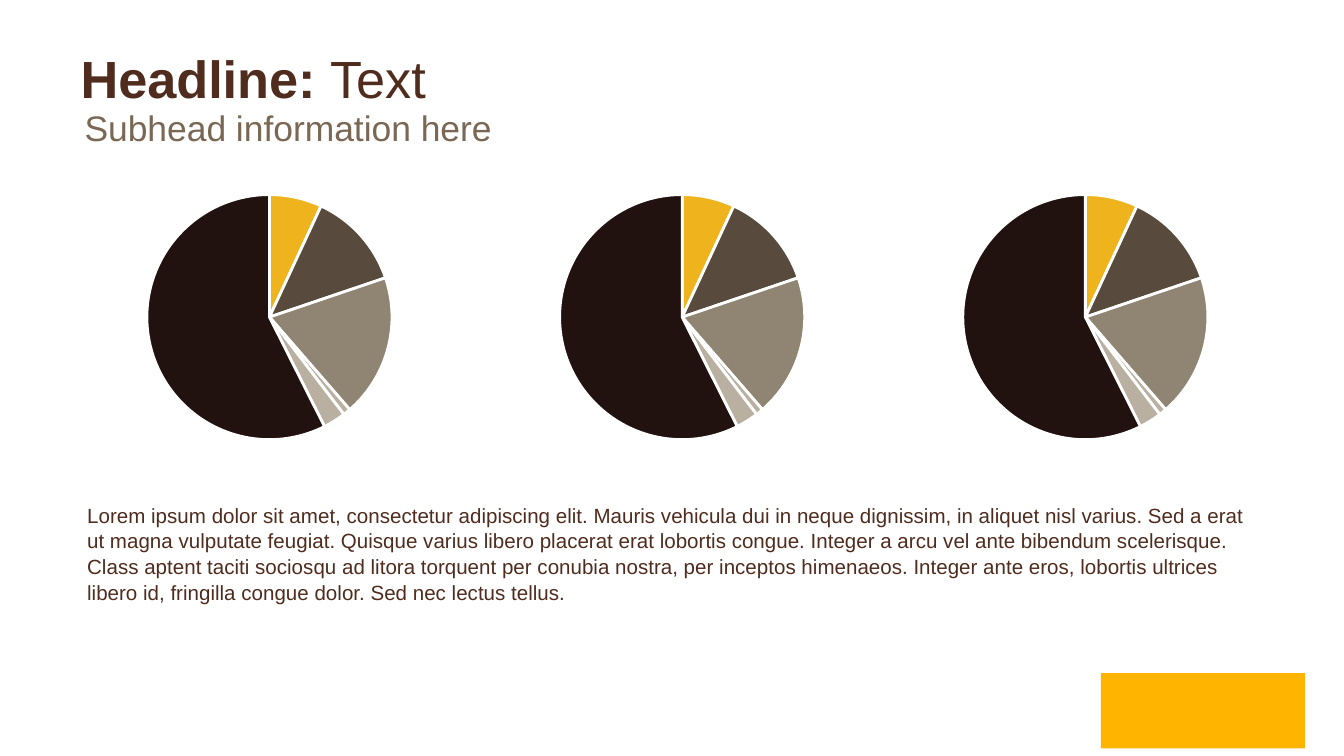
from dataclasses import dataclass

from pptx import Presentation
from pptx import util as u
from pptx.chart import data as chart_data
from pptx.dml.color import RGBColor
from pptx.enum import chart as chart_enum
from pptx.enum import shapes, text


@dataclass(frozen=True)
class Theme:
    heading: str = "4F2C1D"
    subhead: str = "7A6855"
    accent: str = "FFB500"
    white: str = "FFFFFF"
    chart_text: str = "000000"
    slices: tuple[str, ...] = ("EFB31D", "584B3D", "908472", "B9B0A1", "B9B0A1", "21120F")
    text_font: str = "Arial"
    chart_font: str = "Calibri"
    title_size: float = 28
    subhead_size: float = 19
    body_size: float = 11
    chart_size: float = 12


@dataclass(frozen=True)
class Area:
    left: float
    top: float
    width: float
    height: float

    def lengths(self) -> tuple[u.Length, ...]:
        return tuple(u.Pt(n) for n in (self.left, self.top, self.width, self.height))


@dataclass(frozen=True)
class Pie:
    area: Area
    values: tuple[float, ...]


THEME = Theme()
SHARES = (7, 13, 19, 1, 3, 58)
PIES = [Pie(Area(left, 94.3, 200.9, 151.2), SHARES) for left in (43.9, 265, 481)]
BODY = (
    "Lorem ipsum dolor sit amet, consectetur adipiscing elit. Mauris vehicula dui in neque "
    "dignissim, in aliquet nisl varius. Sed a erat ut magna vulputate feugiat. Quisque varius "
    "libero placerat erat lobortis congue. Integer a arcu vel ante bibendum scelerisque. Class "
    "aptent taciti sociosqu ad litora torquent per conubia nostra, per inceptos himenaeos. "
    "Integer ante eros, lobortis ultrices libero id, fringilla congue dolor. Sed nec lectus tellus."
)


def rgb(value: str) -> RGBColor:
    return RGBColor.from_string(value)


def add_span(para, words: str, *, size: float, color: str, bold: bool = False) -> None:
    span = para.add_run()
    span.text = words
    span.font.name = THEME.text_font
    span.font.size = u.Pt(size)
    span.font.bold = bold
    span.font.color.rgb = rgb(color)


def add_title(page, area: Area) -> None:
    title = page.shapes.title
    title.left, title.top, title.width, title.height = area.lengths()
    frame = title.text_frame
    frame.auto_size = text.MSO_AUTO_SIZE.NONE
    frame.vertical_anchor = text.MSO_ANCHOR.MIDDLE
    para = frame.paragraphs[0]
    para.alignment = text.PP_ALIGN.LEFT
    add_span(para, "Headline: ", size=THEME.title_size, color=THEME.heading, bold=True)
    add_span(para, "Text", size=THEME.title_size, color=THEME.heading)


def add_text(page, area: Area, words: str, *, size: float, color: str,
             spacing: float = 1.0) -> None:
    box = page.shapes.add_textbox(*area.lengths())
    box.text_frame.word_wrap = True
    para = box.text_frame.paragraphs[0]
    para.line_spacing = spacing
    add_span(para, words, size=size, color=color)


def add_block(page, area: Area, color: str) -> None:
    block = page.shapes.add_shape(shapes.MSO_SHAPE.RECTANGLE, *area.lengths())
    block.shadow.inherit = False
    block.fill.solid()
    block.fill.fore_color.rgb = rgb(color)
    block.line.fill.background()


def add_pie(page, pie: Pie) -> None:
    data = chart_data.CategoryChartData()
    data.categories = [str(n) for n in range(1, len(pie.values) + 1)]
    data.add_series("Series 1", pie.values)
    chart = page.shapes.add_chart(
        chart_enum.XL_CHART_TYPE.PIE, *pie.area.lengths(), data).chart
    chart.has_title = False
    chart.has_legend = False
    chart.font.name = THEME.chart_font
    chart.font.size = u.Pt(THEME.chart_size)
    chart.font.color.rgb = rgb(THEME.chart_text)
    plot = chart.plots[0]
    plot.vary_by_categories = True
    for index, color in enumerate(THEME.slices):
        style = plot.series[0].points[index].format
        style.fill.solid()
        style.fill.fore_color.rgb = rgb(color)
        style.line.color.rgb = rgb(THEME.white)
        style.line.width = u.Pt(1.5)


def main() -> None:
    deck = Presentation()
    deck.slide_width, deck.slide_height = u.Pt(720), u.Pt(405)
    page = deck.slides.add_slide(deck.slide_layouts.get_by_name("Title Only"))
    add_block(page, Area(589.7, 360.7, 109.4, 40.3), THEME.accent)
    add_title(page, Area(36, 7.9, 648, 67.7))
    add_text(page, Area(38.2, 53.3, 253.4, 30.2), "Subhead information here",
             size=THEME.subhead_size, color=THEME.subhead)
    for pie in PIES:
        add_pie(page, pie)
    add_text(page, Area(39.6, 265, 642.2, 73.4), BODY,
             size=THEME.body_size, color=THEME.heading, spacing=1.05)
    deck.save("out.pptx")


if __name__ == "__main__":
    main()
